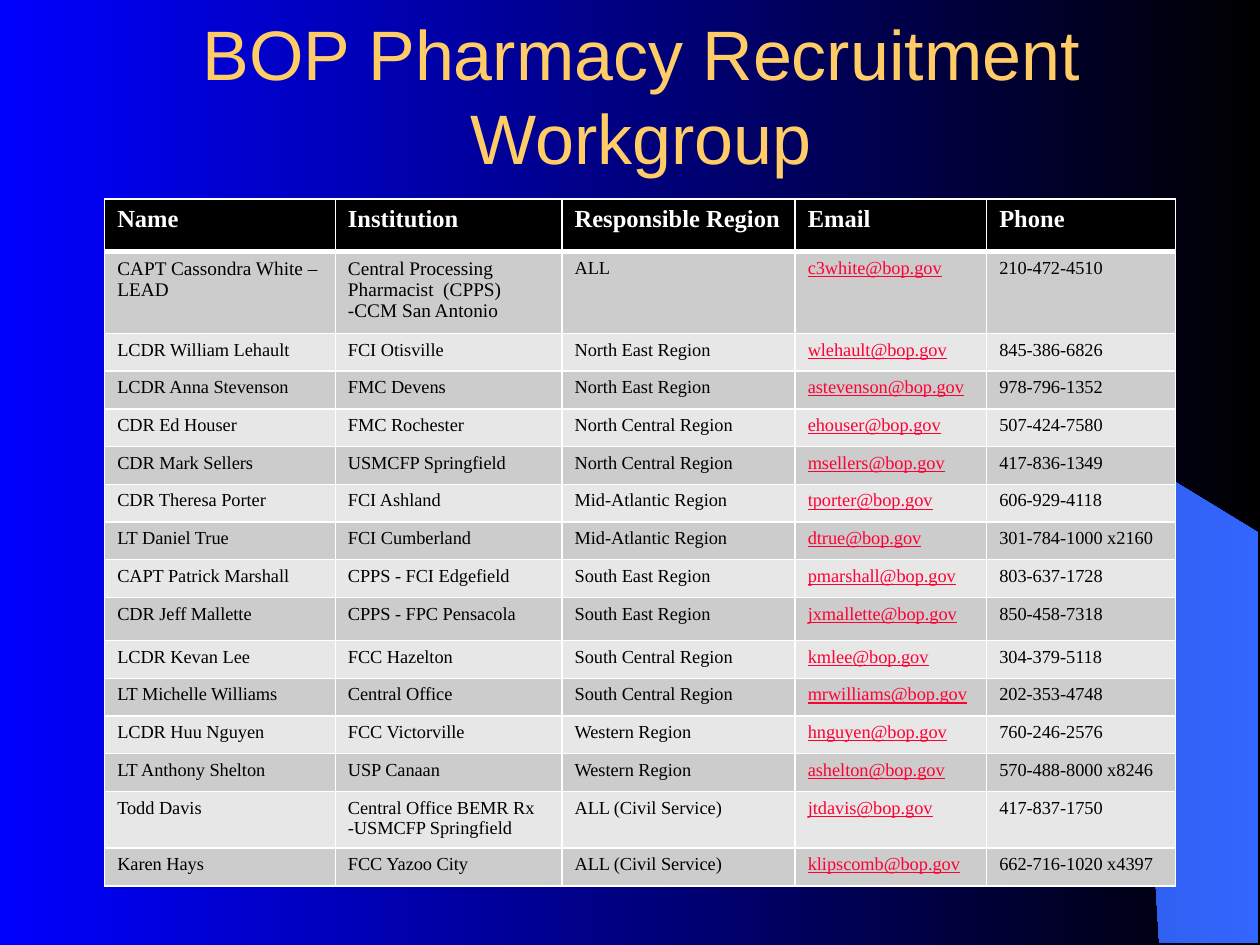
from lxml import etree
from pptx import Presentation
from pptx.dml import color
from pptx.enum import text
from pptx.oxml import ns
from pptx.util import Cm, Pt

TITLE = "BOP Pharmacy Recruitment Workgroup"
HEADINGS = ["Name", "Institution", "Responsible Region", "Email", "Phone"]
MEMBERS = [
    ("CAPT Cassondra White – LEAD", "Central Processing Pharmacist  (CPPS)\n-CCM San Antonio",
     "ALL", "c3white", "210-472-4510"),
    ("LCDR William Lehault", "FCI Otisville", "North East Region", "wlehault", "845-386-6826"),
    ("LCDR Anna Stevenson", "FMC Devens", "North East Region", "astevenson", "978-796-1352"),
    ("CDR Ed Houser", "FMC Rochester", "North Central Region", "ehouser", "507-424-7580"),
    ("CDR Mark Sellers", "USMCFP Springfield", "North Central Region", "msellers", "417-836-1349"),
    ("CDR Theresa Porter", "FCI Ashland", "Mid-Atlantic Region", "tporter", "606-929-4118"),
    ("LT Daniel True", "FCI Cumberland", "Mid-Atlantic Region", "dtrue", "301-784-1000 x2160"),
    ("CAPT Patrick Marshall", "CPPS - FCI Edgefield", "South East Region", "pmarshall", "803-637-1728"),
    ("CDR Jeff Mallette", "CPPS - FPC Pensacola", "South East Region", "jxmallette", "850-458-7318"),
    ("LCDR Kevan Lee", "FCC Hazelton", "South Central Region", "kmlee", "304-379-5118"),
    ("LT Michelle Williams", "Central Office", "South Central Region", "mrwilliams", "202-353-4748"),
    ("LCDR Huu Nguyen", "FCC Victorville", "Western Region", "hnguyen", "760-246-2576"),
    ("LT Anthony Shelton", "USP Canaan", "Western Region", "ashelton", "570-488-8000 x8246"),
    ("Todd Davis", "Central Office BEMR Rx\n-USMCFP Springfield", "ALL (Civil Service)",
     "jtdavis", "417-837-1750"),
    ("Karen Hays", "FCC Yazoo City", "ALL (Civil Service)", "klipscomb", "662-716-1020 x4397"),
]
EMAIL_DOMAIN = "@bop.gov"
EMAIL_COLUMN = HEADINGS.index("Email")
COLUMN_WIDTHS = [4.65, 4.57, 4.7, 3.86, 3.81]
ROW_HEIGHT = 0.76
SPECIAL_HEIGHTS = {0: 1.06, 1: 1.65, 9: 0.87, 14: 1.06}
SWOOSH = [
    (2337, 1900), (2537, 1902), (2537, 1074), (1496, 439), (1585, 505), (1659, 564),
    (1740, 635), (1819, 711), (1935, 838), (2040, 975), (2113, 1095), (2179, 1217),
    (2230, 1341), (2268, 1453), (2294, 1547), (2319, 1666), (2329, 1768),
]


def rgb(value):
    return color.RGBColor.from_string(value)


def shade(fill, *stop_colors):
    fill.gradient()
    fill.gradient_angle = 0
    for stop, value in zip(fill.gradient_stops, stop_colors):
        stop.color.rgb = rgb(value)


def style(frame, face, size, value, bold=False, underline=False):
    for paragraph in frame.paragraphs:
        for run in paragraph.runs:
            run.font.name = face
            run.font.size = Pt(size)
            run.font.color.rgb = rgb(value)
            run.font.bold = bold
            run.font.underline = underline


def add_borders(cell, top, bottom):
    properties = cell._tc.get_or_add_tcPr()
    for side, width in (("L", 1), ("R", 1), ("T", top), ("B", bottom)):
        line = etree.SubElement(properties, ns.qn(f"a:ln{side}"), w=str(Pt(width)))
        solid = etree.SubElement(line, ns.qn("a:solidFill"))
        etree.SubElement(solid, ns.qn("a:srgbClr"), val="FFFFFF")


def add_swoosh(slide):
    builder = slide.shapes.build_freeform(*SWOOSH[0], scale=Cm(0.01))
    builder.add_line_segments(SWOOSH[1:], close=True)
    swoosh = builder.convert_to_shape()
    swoosh.shadow.inherit = False
    swoosh.line.fill.background()
    shade(swoosh.fill, "2449B6", "3366FF")


def add_title(slide):
    frame = slide.shapes.add_textbox(Cm(1.7), Cm(0.43), Cm(22.45), Cm(2.97)).text_frame
    frame.word_wrap = True
    frame.vertical_anchor = text.MSO_ANCHOR.MIDDLE
    frame.text = TITLE
    frame.paragraphs[0].alignment = text.PP_ALIGN.CENTER
    style(frame, "Arial", 40, "FFCC66")


def add_roster(slide):
    rows = [HEADINGS] + [
        (name, institution, region, user + EMAIL_DOMAIN, phone)
        for name, institution, region, user, phone in MEMBERS
    ]
    heights = [SPECIAL_HEIGHTS.get(index, ROW_HEIGHT) for index in range(len(rows))]
    roster = slide.shapes.add_table(
        len(rows), len(HEADINGS), Cm(2.11), Cm(4.01), Cm(sum(COLUMN_WIDTHS)), Cm(sum(heights))
    ).table
    for column, width in zip(roster.columns, COLUMN_WIDTHS):
        column.width = Cm(width)
    for row_index, (values, height) in enumerate(zip(rows, heights)):
        roster.rows[row_index].height = Cm(height)
        is_header = row_index == 0
        for column_index, value in enumerate(values):
            cell = roster.cell(row_index, column_index)
            add_borders(cell, 3 if row_index == 1 else 1, 3 if is_header else 1)
            cell.fill.solid()
            band = "CCCCCC" if row_index % 2 else "E7E7E7"
            cell.fill.fore_color.rgb = rgb("000000" if is_header else band)
            cell.text_frame.text = value
            if is_header:
                style(cell.text_frame, "Times New Roman", 14, "FFFFFF", bold=True)
            else:
                is_email = column_index == EMAIL_COLUMN
                size = 11 if row_index == 1 and column_index < 2 else 10.5
                style(cell.text_frame, "Times New Roman", size,
                      "FF0033" if is_email else "000000", underline=is_email)


def main():
    deck = Presentation()
    deck.slide_width, deck.slide_height = Cm(25.4), Cm(19.05)
    slide = deck.slides.add_slide(deck.slide_layouts[6])
    shade(slide.background.fill, "0000FF", "000000")
    add_swoosh(slide)
    add_title(slide)
    add_roster(slide)
    deck.save("out.pptx")


if __name__ == "__main__":
    main()
